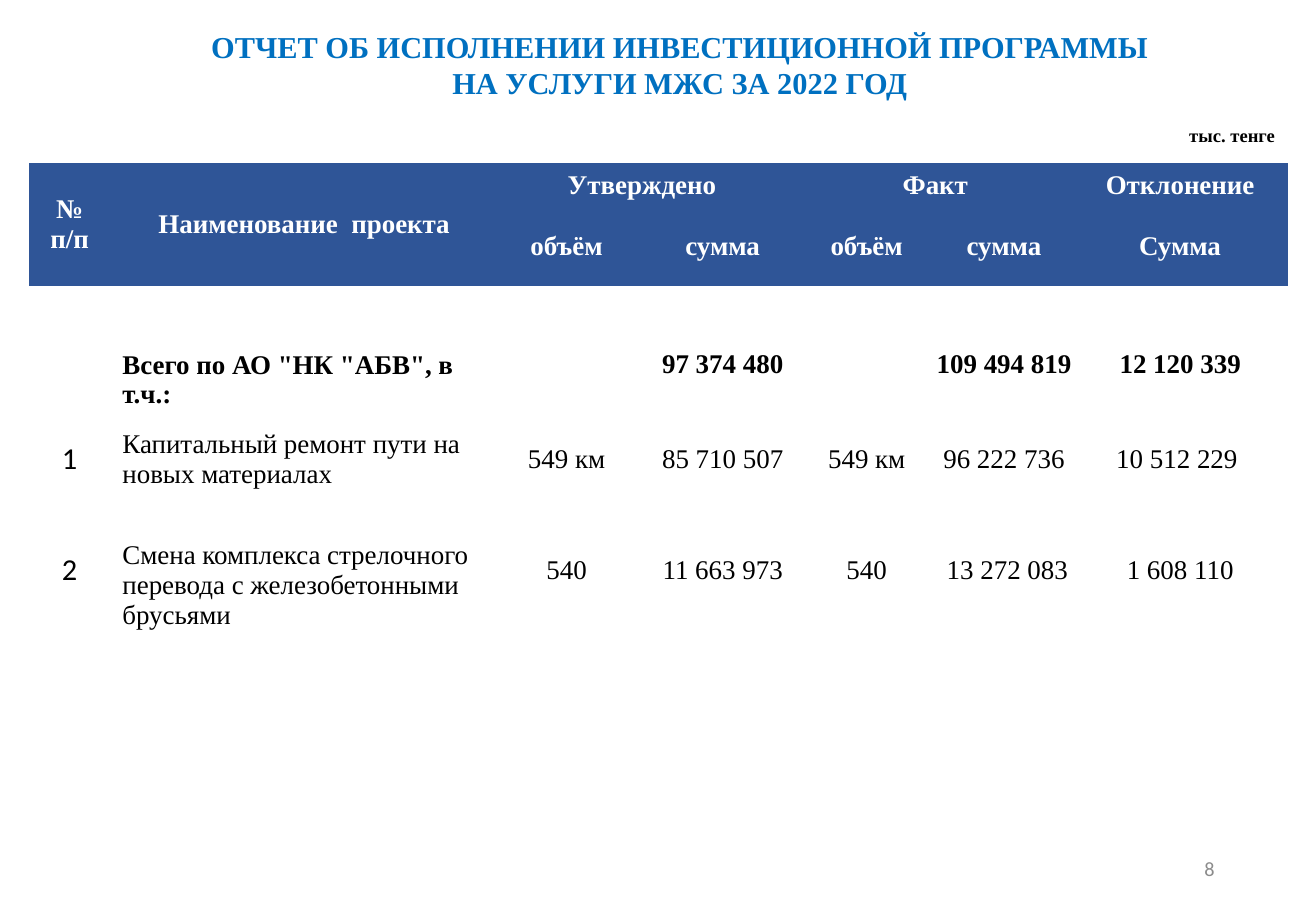
from dataclasses import dataclass

from pptx import Presentation
from pptx.dml.color import RGBColor
from pptx.enum.text import MSO_ANCHOR, PP_ALIGN
from pptx.util import Inches, Pt

W, H = 10.83, 7.5
COLS = [0.67, 3.09, 1.33, 1.24, 1.13, 1.13, 1.77]
ROWS = [0.36, 0.65, 1.05, 0.76, 1.06, 0.74, 0.74]
HEADER_ROWS = 2
TOTAL_ROW = 2
LINE = 0.25
NO_GRID = "{2D5ABB26-0587-4C30-8999-92F81FD0307C}"

CELLS = [
    ["№ п/п", "Наименование  проекта", "Утверждено", "", "Факт", "", "Отклонение"],
    ["", "", "объём", "сумма", "объём", "сумма", "Сумма"],
    ["", 'Всего по АО "НК "АБВ", в т.ч.:', "", "97 374 480", "",
     "109 494 819", "12 120 339"],
    ["1", "Капитальный ремонт пути на новых материалах", "549 км",
     "85 710 507", "549 км", "96 222 736", "10 512 229 "],
    ["2", "Смена комплекса стрелочного перевода с железобетонными брусьями",
     "540", "11 663 973", "540", " 13 272 083", "1 608 110"],
    [""] * len(COLS),
    [""] * len(COLS),
]
MERGES = [(0, 0, 1, 0), (0, 1, 1, 1), (0, 2, 0, 3), (0, 4, 0, 5)]
TOP_OFFSETS = {(2, 1): 2 * LINE, (2, 3): LINE, (2, 5): LINE, (2, 6): LINE,
               (4, 1): LINE}


@dataclass(frozen=True)
class Theme:
    serif: str = "Times New Roman"
    sans: str = "Calibri"
    title: str = "0070C0"
    header: str = "2F5597"
    paper: str = "FFFFFF"
    ink: str = "000000"
    muted: str = "8C8C8C"
    title_size: int = 18
    body_size: int = 16
    number_size: int = 18
    page_size: int = 12
    unit_size: int = 11


T = Theme()


def write(tf, text, *, size=T.body_size, color=T.ink, font=T.serif, bold=False,
          align=PP_ALIGN.CENTER):
    tf.word_wrap = True
    for i, line in enumerate(text.split("\n")):
        p = tf.paragraphs[0] if i == 0 else tf.add_paragraph()
        p.alignment = align
        r = p.add_run()
        r.text = line
        r.font.size = Pt(size)
        r.font.name = font
        r.font.bold = bold
        r.font.color.rgb = RGBColor.from_string(color)


def add_text(s, x, y, w, h, text, anchor=MSO_ANCHOR.MIDDLE, **style):
    sp = s.shapes.add_textbox(Inches(x * W), Inches(y * H),
                              Inches(w * W), Inches(h * H))
    sp.text_frame.vertical_anchor = anchor
    write(sp.text_frame, text, **style)


def fill_cell(cell, row, col, text):
    is_header = row < HEADER_ROWS
    is_name = col == 1 and not is_header
    is_number = col == 0 and not is_header
    cell.fill.solid()
    cell.fill.fore_color.rgb = RGBColor.from_string(T.header if is_header else T.paper)
    cell.vertical_anchor = MSO_ANCHOR.MIDDLE
    cell.margin_left = Inches(0.1 if col < 2 else 0)
    cell.margin_right = Inches(0.1 if col == 0 else 0)
    cell.margin_top = Inches(TOP_OFFSETS.get((row, col), 0))
    cell.margin_bottom = 0
    if text:
        write(cell.text_frame, text,
              size=T.number_size if is_number else T.body_size,
              font=T.sans if is_number else T.serif,
              color=T.paper if is_header else T.ink,
              bold=row <= TOTAL_ROW,
              align=PP_ALIGN.LEFT if is_name else PP_ALIGN.CENTER)


def add_report_table(s, x, y):
    frame = s.shapes.add_table(len(ROWS), len(COLS), Inches(x * W), Inches(y * H),
                               Inches(sum(COLS)), Inches(sum(ROWS)))
    table = frame.table
    table.first_row = table.horz_banding = False
    table._tbl.tblPr[0].text = NO_GRID
    for column, width in zip(table.columns, COLS):
        column.width = Inches(width)
    for row, height in zip(table.rows, ROWS):
        row.height = Inches(height)
    for top, left, bottom, right in MERGES:
        table.cell(top, left).merge(table.cell(bottom, right))
    for i, texts in enumerate(CELLS):
        for j, text in enumerate(texts):
            fill_cell(table.cell(i, j), i, j, text)


def main():
    prs = Presentation()
    prs.slide_width, prs.slide_height = Inches(W), Inches(H)
    s = prs.slides.add_slide(prs.slide_layouts[6])
    add_text(s, 0.086, 0.024, 0.867, 0.095,
             "ОТЧЕТ ОБ ИСПОЛНЕНИИ ИНВЕСТИЦИОННОЙ ПРОГРАММЫ \n"
             "НА УСЛУГИ МЖС ЗА 2022 ГОД ",
             anchor=MSO_ANCHOR.TOP, size=T.title_size, color=T.title, bold=True)
    add_report_table(s, 0.022, 0.179)
    add_text(s, 0.861, 0.129, 0.117, 0.039, "тыс. тенге",
             size=T.unit_size, bold=True, align=PP_ALIGN.RIGHT)
    add_text(s, 0.706, 0.927, 0.226, 0.053, "8", size=T.page_size,
             color=T.muted, font=T.sans, align=PP_ALIGN.RIGHT)
    prs.save("out.pptx")


if __name__ == "__main__":
    main()
